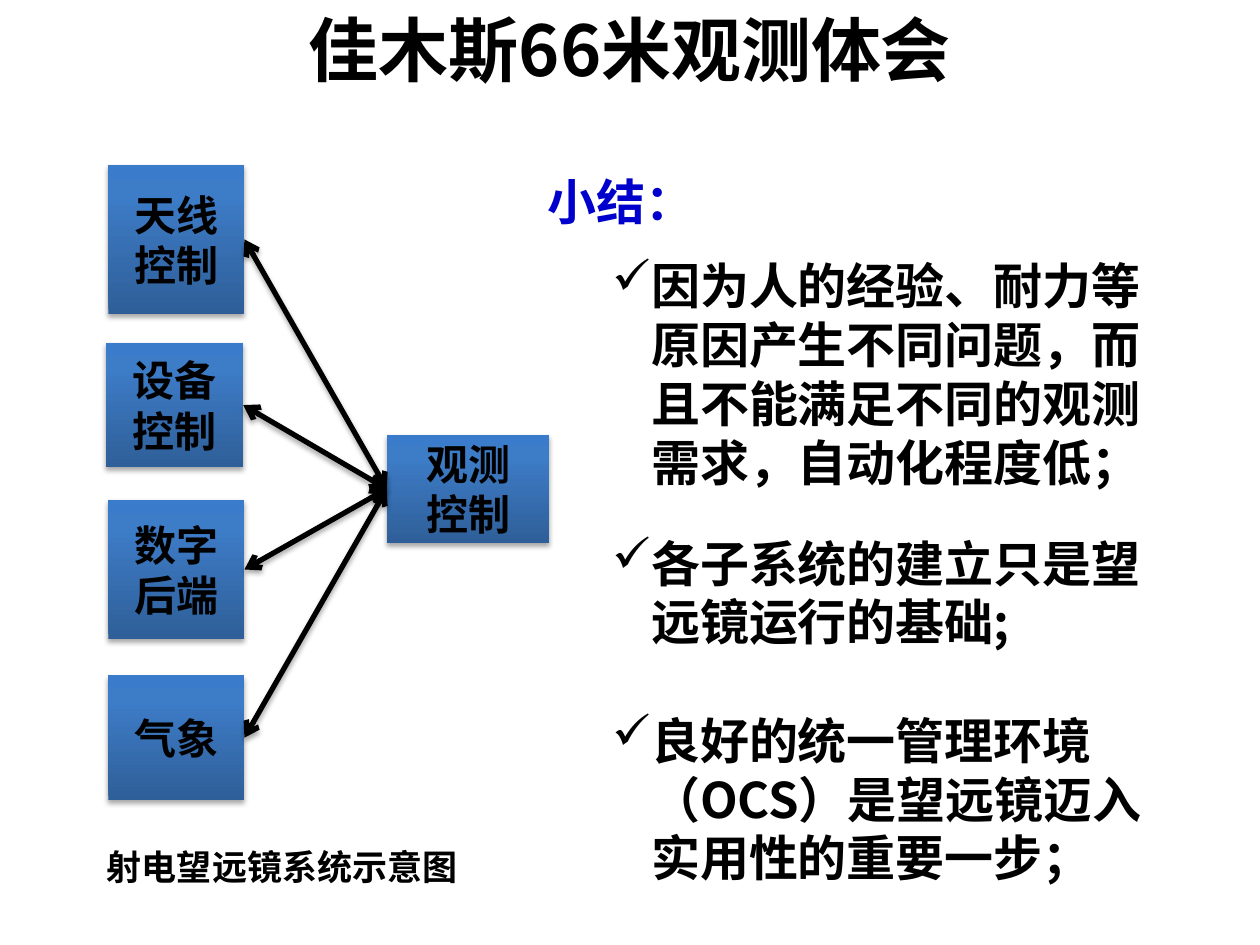
from lxml import etree
from pptx import Presentation
from pptx.dml.color import RGBColor
from pptx.enum.shapes import MSO_CONNECTOR, MSO_SHAPE
from pptx.enum.text import MSO_ANCHOR, PP_ALIGN
from pptx.oxml import parse_xml
from pptx.oxml.ns import qn
from pptx.util import Inches, Pt

RECTANGLE, STRAIGHT = MSO_SHAPE.RECTANGLE, MSO_CONNECTOR.STRAIGHT
LEFT, CENTER = PP_ALIGN.LEFT, PP_ALIGN.CENTER
TOP, MIDDLE = MSO_ANCHOR.TOP, MSO_ANCHOR.MIDDLE
LEFT_SIDE, RIGHT_SIDE = 1, 3

# Content: text boxes are (left, top, width, height)
TITLE = ("佳木斯66米观测体会", (0, 0, 10, 0.77))
CAPTION = ("射电望远镜系统示意图", (0.75, 6.66, 4.19, 0.44))
HEADING = ("小结：", (4.25, 1.31, 1.38, 0.57))
POINTS_BOX = (4.76, 1.98, 4.72, 5.15)
POINTS = [  # text, space before in points
    ("因为人的经验、耐力等原因产生不同问题，而且不能满足不同的观测需求，自动化程度低；", 0),
    ("各子系统的建立只是望远镜运行的基础;", 24),
    ("良好的统一管理环境（OCS）是望远镜迈入实用性的重要一步；", 34),
]
CONTROLLER = (["观测", "控制"], (3.07, 3.45, 1.29, 0.86))
SUBSYSTEMS = [
    (["天线", "控制"], (0.86, 1.31, 1.08, 1.18)),
    (["设备", "控制"], (0.84, 2.72, 1.09, 0.99)),
    (["数字", "后端"], (0.86, 3.97, 1.08, 1.1)),
    (["气象"], (0.86, 5.36, 1.08, 0.99)),
]

THEME = {
    "font": "Noto Sans CJK SC",
    "ink": "000000",
    "accent": "0000CC",
    "gradient": [(0, "2F5F99"), (80, "3D7CC7"), (100, "3A7CCB")],
    "title": 40, "body": 28, "label": 24, "caption": 20,
    "line": 3,
    "indent": 0.31,
}
NAMESPACE = 'xmlns:a="http://schemas.openxmlformats.org/drawingml/2006/main"'


def write(box, lines, size, color=THEME["ink"], align=LEFT, anchor=TOP, wrap=True):
    frame = box.text_frame
    frame.word_wrap = wrap
    frame.vertical_anchor = anchor
    for index, line in enumerate(lines):
        para = frame.paragraphs[0] if index == 0 else frame.add_paragraph()
        para.alignment = align
        span = para.add_run()
        span.text = line
        font_values = {"name": THEME["font"], "size": Pt(size), "bold": True}
        for name, value in font_values.items():
            setattr(span.font, name, value)
        span.font.color.rgb = RGBColor.from_string(color)
        east_asian = etree.SubElement(span.font._element, qn("a:ea"))
        east_asian.set("typeface", THEME["font"])


def add_text(page, place, lines, size, **options):
    box = page.shapes.add_textbox(*map(Inches, place))
    write(box, lines, size, **options)
    return box


def add_shadow(shape):
    """Give a block or connector a soft shadow falling straight down."""
    properties = shape._element.spPr
    for old in properties.findall(qn("a:effectLst")):
        properties.remove(old)
    properties.append(parse_xml(
        f'<a:effectLst {NAMESPACE}><a:outerShdw blurRad="{Pt(3.1)}" dist="{Pt(1.8)}" '
        'dir="5400000" rotWithShape="0"><a:srgbClr val="000000"><a:alpha val="35000"/>'
        '</a:srgbClr></a:outerShdw></a:effectLst>'))


def add_block(page, lines, place):
    block = page.shapes.add_shape(RECTANGLE, *map(Inches, place))
    stops = "".join(
        f'<a:gs pos="{position * 1000}"><a:srgbClr val="{color}"/></a:gs>'
        for position, color in THEME["gradient"])
    block._element.spPr.find(qn("a:prstGeom")).addnext(parse_xml(
        f'<a:gradFill {NAMESPACE} rotWithShape="1"><a:gsLst>{stops}</a:gsLst>'
        '<a:lin ang="16200000" scaled="0"/></a:gradFill>'))
    block.line.fill.background()
    block.shadow.inherit = False
    add_shadow(block)
    write(block, lines, THEME["label"], align=CENTER, anchor=MIDDLE)
    return block


def add_link(page, start, end):
    """Join the right side of start to the left side of end, arrows at both ends."""
    link = page.shapes.add_connector(STRAIGHT, 0, 0, 0, 0)
    link.begin_connect(start, RIGHT_SIDE)
    link.end_connect(end, LEFT_SIDE)
    link.line.width = Pt(THEME["line"])
    link.line.color.rgb = RGBColor.from_string(THEME["ink"])
    outline = link._element.spPr.find(qn("a:ln"))
    for tag in ("a:headEnd", "a:tailEnd"):
        etree.SubElement(outline, qn(tag)).set("type", "arrow")
    add_shadow(link)


def add_points(page):
    box = add_text(page, POINTS_BOX, [text for text, _ in POINTS], THEME["body"])
    indent = Inches(THEME["indent"])
    for para, (_, gap) in zip(box.text_frame.paragraphs, POINTS):
        para.space_before = Pt(gap)
        properties = para._p.get_or_add_pPr()
        properties.set("marL", str(indent))
        properties.set("indent", str(-indent))
        etree.SubElement(properties, qn("a:buChar")).set("char", "✓")


def main():
    deck = Presentation()
    deck.slide_width, deck.slide_height = Inches(10), Inches(7.5)
    page = deck.slides.add_slide(deck.slide_layouts[6])

    for (text, place), size, options in [
        (TITLE, THEME["title"], {"align": CENTER}),
        (CAPTION, THEME["caption"], {}),
        (HEADING, THEME["body"], {"color": THEME["accent"], "wrap": False}),
    ]:
        add_text(page, place, [text], size, **options)
    add_points(page)

    controller = add_block(page, *CONTROLLER)
    blocks = [add_block(page, *subsystem) for subsystem in SUBSYSTEMS]
    for block in blocks:
        add_link(page, block, controller)

    deck.save("out.pptx")


if __name__ == "__main__":
    main()
